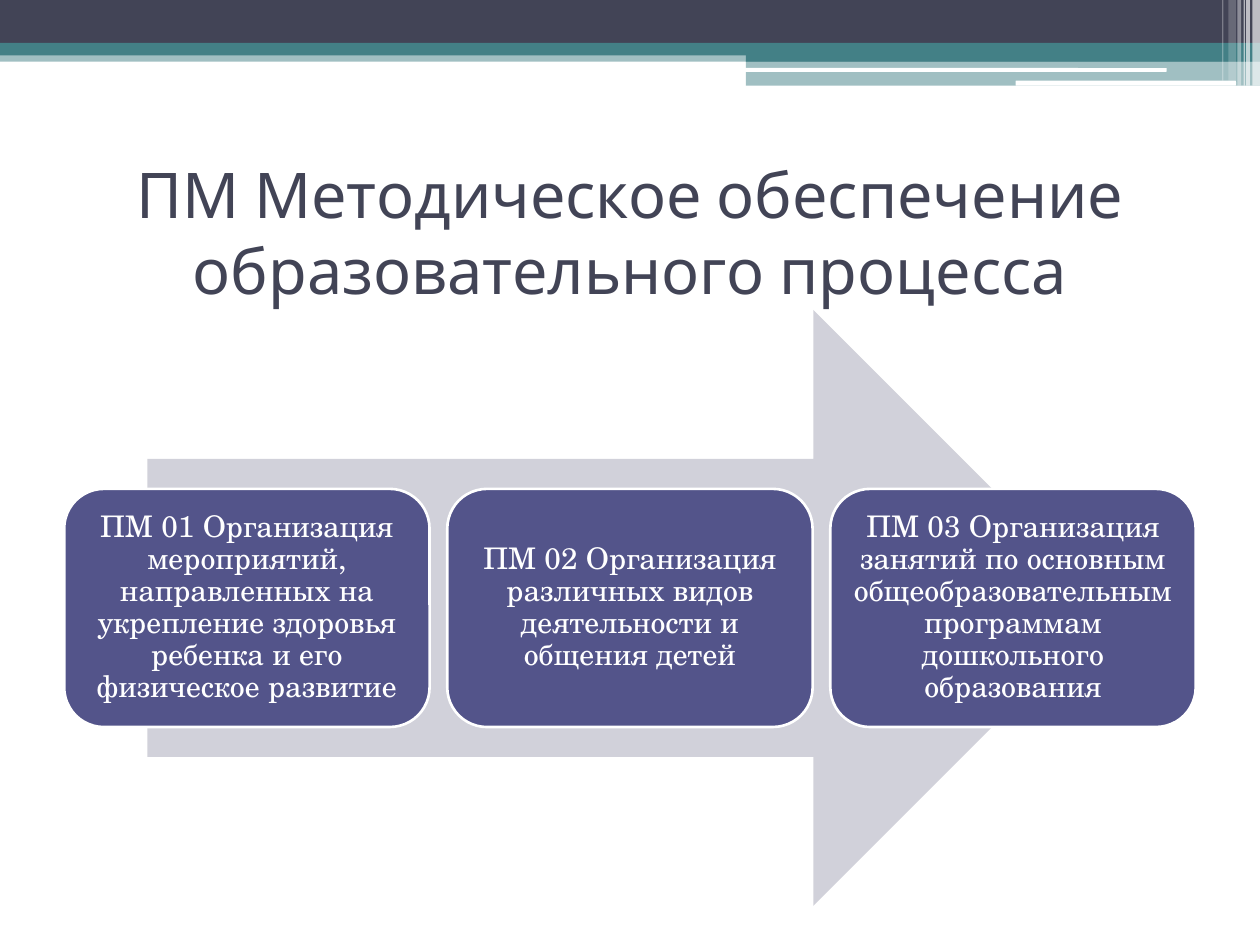
"""Build a slide with three training modules laid over a right arrow."""
from lxml import etree
from pptx import Presentation
from pptx.dml.color import RGBColor
from pptx.enum.shapes import MSO_SHAPE
from pptx.enum.text import MSO_ANCHOR, PP_ALIGN
from pptx.oxml.ns import qn
from pptx.util import Inches, Pt

RECT, ROUND, ARROW = MSO_SHAPE.RECTANGLE, MSO_SHAPE.ROUNDED_RECTANGLE, MSO_SHAPE.RIGHT_ARROW
MIDDLE, CENTER = MSO_ANCHOR.MIDDLE, PP_ALIGN.CENTER

THEME = {
    "dark": "424456", "teal": "438086", "white": "FFFFFF",
    "arrow": "D1D1DA", "card": "53548A",
    "title_font": "Karla", "body_font": "TeX Gyre Schola",
    "title_size": Pt(36), "body_size": Pt(17),
}


def add_block(kind, x, y, w, h, color, alpha=100):
    sp = s.shapes.add_shape(kind, Inches(x), Inches(y), Inches(w), Inches(h))
    sp.shadow.inherit = False
    sp.fill.solid()
    sp.fill.fore_color.rgb = RGBColor.from_string(THEME[color])
    sp.line.fill.background()
    if alpha < 100:
        clr = sp._element.spPr.find(qn("a:solidFill"))[0]
        etree.SubElement(clr, qn("a:alpha")).set("val", str(alpha * 1000))
    return sp


def write_text(sp, text, inset_x, inset_y, role, color):
    tf = sp.text_frame
    tf.word_wrap = True
    tf.vertical_anchor = MIDDLE
    tf.margin_left = tf.margin_right = Inches(inset_x)
    tf.margin_top = tf.margin_bottom = Inches(inset_y)
    p = tf.paragraphs[0]
    p.text = text
    p.alignment = CENTER
    p.font.name = THEME[role + "_font"]
    p.font.size = THEME[role + "_size"]
    p.font.color.rgb = RGBColor.from_string(THEME[color])
    return p


prs = Presentation()
prs.slide_width, prs.slide_height = Inches(10), Inches(7.5)
s = prs.slides.add_slide(prs.slide_layouts[6])

header = [
    (RECT, 0, 0.4, 10, 0.09, "teal", 50),
    (RECT, 0, 0, 10, 0.34, "dark"),
    (RECT, 0, 0.34, 10, 0.1, "teal"),
    (RECT, 5.92, 0.39, 4.08, 0.1, "teal"),
    (RECT, 5.92, 0.48, 4.08, 0.2, "teal", 50),
    (ROUND, 5.91, 0.54, 3.35, 0.03, "white"),
    (ROUND, 8.06, 0.64, 1.75, 0.04, "white"),
]
for block in header:
    add_block(*block)

stripes = [
    (9.94, 0.06, 0.68, 65), (9.89, 0.03, 0.68, 65), (9.87, 0.01, 0.68, 60),
    (9.82, 0.03, 0.68, 40), (9.75, 0.06, 0.64, 20), (9.7, 0.01, 0.64, 30),
]
for x, w, h, alpha in stripes:
    add_block(RECT, x, 0, w, h, "white", alpha)

title = s.shapes.add_textbox(Inches(0.5), Inches(1.25), Inches(9), Inches(1.17))
write_text(title, "ПМ Методическое обеспечение образовательного процесса", 0.1, 0.05, "title", "dark")

add_block(ARROW, 1.17, 2.46, 7.65, 4.73, "arrow")

modules = [
    "ПМ 01 Организация мероприятий, направленных на укрепление здоровья ребенка и его физическое развитие",
    "ПМ 02 Организация различных видов деятельности и общения детей",
    "ПМ 03 Организация занятий по основным общеобразовательным программам дошкольного образования",
]
for i, module in enumerate(modules):
    card = add_block(ROUND, 0.51 + i * 3.04, 3.88, 2.9, 1.89, "card")
    card.line.color.rgb = RGBColor.from_string(THEME["white"])
    card.line.width = Pt(1.5)
    p = write_text(card, module, 0.07, 0.07, "body", "white")
    p.line_spacing = 0.9

prs.save("out.pptx")
